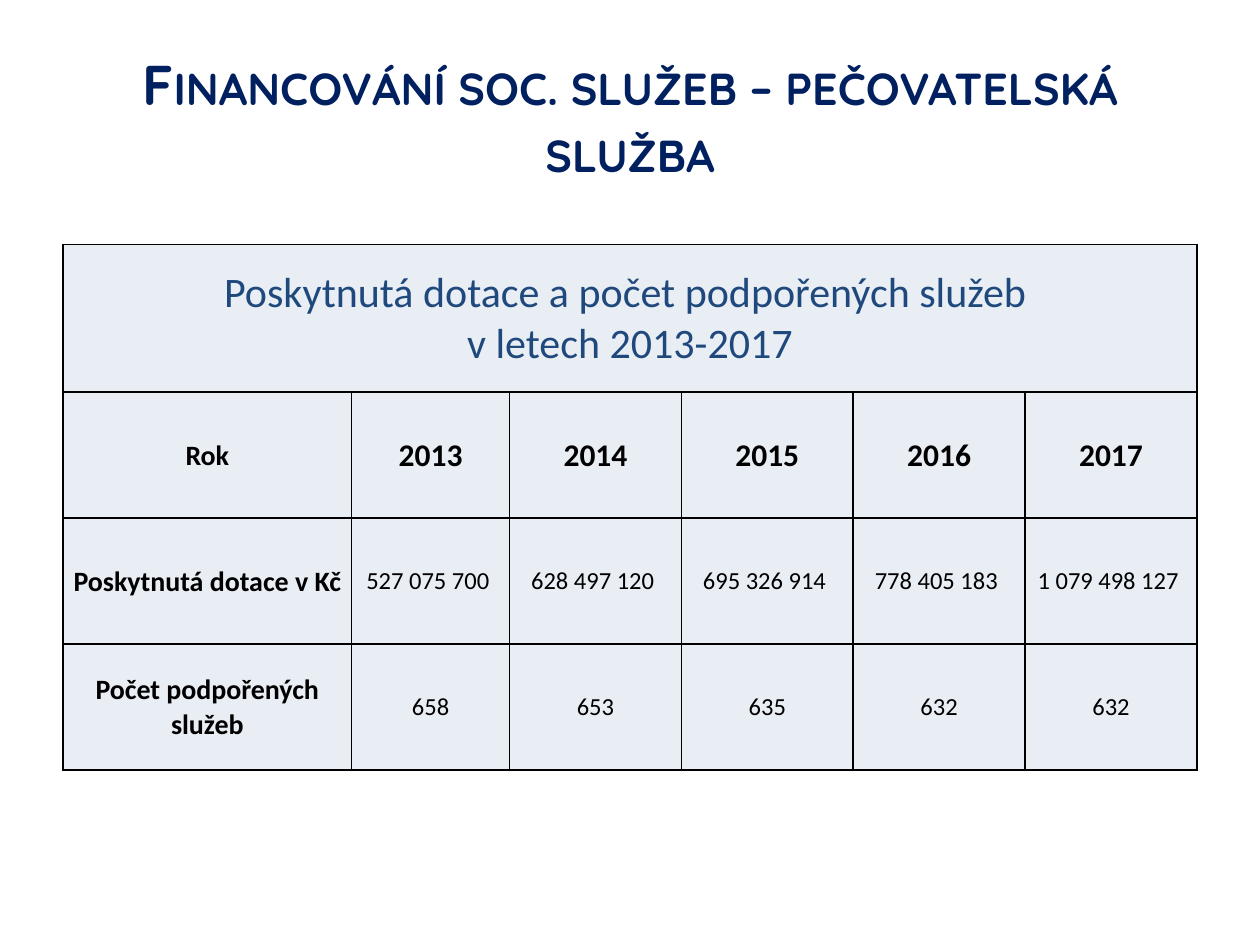
import dataclasses

import lxml.etree
import pptx
import pptx.dml.color
import pptx.enum.text
import pptx.oxml.ns
import pptx.table
import pptx.text.text
import pptx.util

Pt = pptx.util.Pt

COLORS = {
    "heading": "002060",
    "caption": "1F497D",
    "text": "000000",
    "cell": "E9EDF4",
    "border": "000000",
}


@dataclasses.dataclass(frozen=True)
class TextStyle:
    size: float
    color: str = "text"
    bold: bool = False
    font: str = "Calibri"


@dataclasses.dataclass(frozen=True)
class GrantRow:
    label: str
    values: tuple[str, ...]
    value_style: TextStyle


HEADING = TextStyle(32, "heading", True, "Quicksand")
CAPTION = TextStyle(24, "caption")
LABEL = TextStyle(16, bold=True)
YEAR = TextStyle(18, bold=True)
FIGURE = TextStyle(14)

CAPTION_TEXT = "Poskytnutá dotace a počet podpořených služeb \nv letech 2013-2017"
GRANT_ROWS = (
    GrantRow("Rok", ("2013", "2014", "2015", "2016", "2017"), YEAR),
    GrantRow(
        "Poskytnutá dotace v Kč",
        ("527 075 700 ", "628 497 120 ", "695 326 914 ", "778 405 183 ", "1 079 498 127 "),
        FIGURE,
    ),
    GrantRow("Počet podpořených služeb", ("658", "653", "635", "632", "632"), FIGURE),
)
COLUMN_WIDTHS = (165, 90.2) + (98.2,) * 4
ROW_HEIGHTS = (84.24,) + (72,) * 3


def write_text(frame: pptx.text.text.TextFrame, text: str, style: TextStyle) -> None:
    frame.text = text
    for paragraph in frame.paragraphs:
        paragraph.alignment = pptx.enum.text.PP_ALIGN.CENTER
        paragraph.font.name = style.font
        paragraph.font.size = Pt(style.size)
        paragraph.font.bold = style.bold
        paragraph.font.color.rgb = pptx.dml.color.RGBColor.from_string(COLORS[style.color])


def draw_borders(cell: pptx.table._Cell) -> None:
    properties = cell._tc.get_or_add_tcPr()
    qn = pptx.oxml.ns.qn
    for side in ("lnL", "lnR", "lnT", "lnB"):
        line = lxml.etree.SubElement(properties, qn(f"a:{side}"), w=str(Pt(1)))
        fill = lxml.etree.SubElement(line, qn("a:solidFill"))
        lxml.etree.SubElement(fill, qn("a:srgbClr"), val=COLORS["border"])


def format_cell(cell: pptx.table._Cell) -> None:
    draw_borders(cell)
    cell.fill.solid()
    cell.fill.fore_color.rgb = pptx.dml.color.RGBColor.from_string(COLORS["cell"])
    cell.vertical_anchor = pptx.enum.text.MSO_ANCHOR.MIDDLE
    cell.margin_left = cell.margin_right = cell.margin_top = Pt(0.72)
    cell.margin_bottom = Pt(0)


def main() -> None:
    presentation = pptx.Presentation()
    presentation.slide_width, presentation.slide_height = Pt(720), Pt(540)
    slide = presentation.slides.add_slide(presentation.slide_layouts[5])

    heading = slide.shapes.title
    heading.left, heading.top, heading.width, heading.height = Pt(36), Pt(21.6), Pt(648), Pt(90)
    heading.text_frame.auto_size = pptx.enum.text.MSO_AUTO_SIZE.NONE
    heading.text_frame.vertical_anchor = pptx.enum.text.MSO_ANCHOR.MIDDLE
    write_text(heading.text_frame, "Financování soc. služeb – pečovatelská služba", HEADING)
    heading.text_frame.paragraphs[0].font._element.set("cap", "small")

    grants = slide.shapes.add_table(
        len(ROW_HEIGHTS), len(COLUMN_WIDTHS),
        Pt(36), Pt(139.7), Pt(sum(COLUMN_WIDTHS)), Pt(sum(ROW_HEIGHTS)),
    ).table
    grants.first_row = grants.horz_banding = False
    for column, width in zip(grants.columns, COLUMN_WIDTHS):
        column.width = Pt(width)
    for row, height in zip(grants.rows, ROW_HEIGHTS):
        row.height = Pt(height)
    for cell in grants.iter_cells():
        format_cell(cell)

    caption = grants.cell(0, 0)
    caption.merge(grants.cell(0, len(COLUMN_WIDTHS) - 1))
    write_text(caption.text_frame, CAPTION_TEXT, CAPTION)
    for row_index, grant_row in enumerate(GRANT_ROWS, start=1):
        write_text(grants.cell(row_index, 0).text_frame, grant_row.label, LABEL)
        for column_index, value in enumerate(grant_row.values, start=1):
            write_text(grants.cell(row_index, column_index).text_frame, value, grant_row.value_style)

    presentation.save("out.pptx")


if __name__ == "__main__":
    main()
